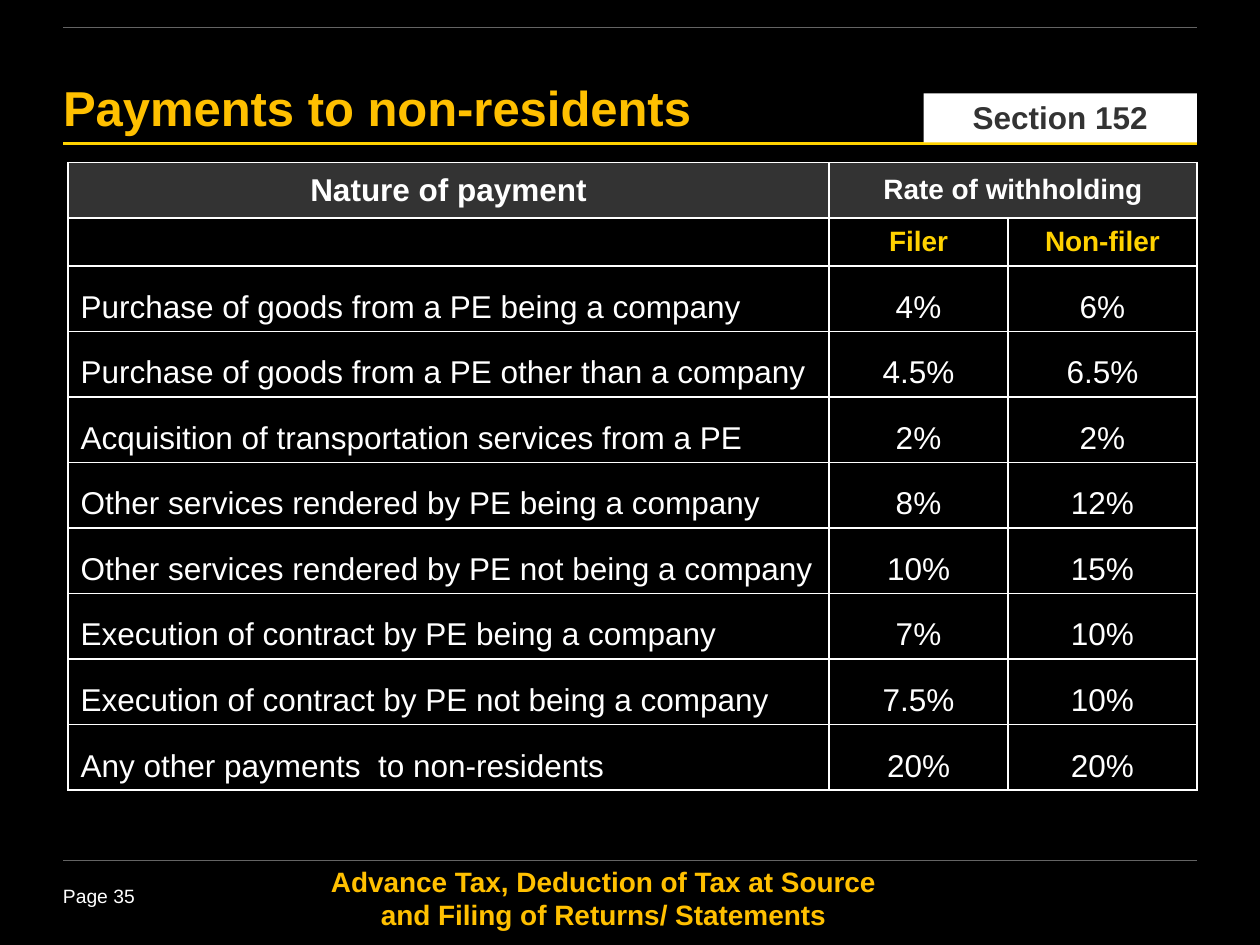
from lxml.etree import SubElement
from pptx import Presentation
from pptx.dml.color import RGBColor
from pptx.enum.shapes import MSO_CONNECTOR as Connector, MSO_SHAPE as Shape
from pptx.enum.text import MSO_ANCHOR as Anchor, PP_ALIGN as Align
from pptx.oxml.ns import qn
from pptx.util import Inches, Pt

BLACK, WHITE, CHARCOAL, GREY = "000000", "FFFFFF", "333333", "646464"
YELLOW, AMBER = "FFD200", "FFC000"

COLUMN_WIDTHS = (6.04, 1.42, 1.5)
HEADER_HEIGHT, SUBHEADER_HEIGHT, RATE_HEIGHT = 0.44, 0.38, 0.52
RATES = [
    ("Purchase of goods from a PE being a company", "4%", "6%"),
    ("Purchase of goods from a PE other than a company", "4.5%", "6.5%"),
    ("Acquisition of transportation services from a PE", "2%", "2%"),
    ("Other services rendered by PE being a company", "8%", "12%"),
    ("Other services rendered by PE not being a company", "10%", "15%"),
    ("Execution of contract by PE being a company", "7%", "10%"),
    ("Execution of contract by PE not being a company", "7.5%", "10%"),
    ("Any other payments  to non-residents", "20%", "20%"),
]


def rgb(hex_color):
    """Turn a hex string into a colour."""
    return RGBColor.from_string(hex_color)


def write(frame, text, size, color, bold=False, align=Align.LEFT, spacing=None):
    """Write one formatted run into the first paragraph of a text frame."""
    paragraph = frame.paragraphs[0]
    paragraph.alignment = align
    if spacing:
        paragraph.line_spacing = spacing
    run = paragraph.add_run()
    run.text = text
    run.font.name = "Arial"
    run.font.size = Pt(size)
    run.font.bold = bold
    run.font.color.rgb = rgb(color)


def set_frame(frame, top=0, anchor=Anchor.TOP):
    """Wrap a text frame and clear its insets except the top one."""
    frame.word_wrap = True
    frame.margin_left = frame.margin_right = frame.margin_bottom = 0
    frame.margin_top = Inches(top)
    frame.vertical_anchor = anchor
    return frame


def add_label(slide, left, top, width, height, inset=0):
    """Add an empty text box and return its text frame."""
    label = slide.shapes.add_textbox(
        Inches(left), Inches(top), Inches(width), Inches(height))
    return set_frame(label.text_frame, inset)


def add_rule(slide, left, top, width, color, weight):
    """Draw a horizontal rule."""
    rule = slide.shapes.add_connector(
        Connector.STRAIGHT, Inches(left), Inches(top),
        Inches(left + width), Inches(top))
    rule.line.color.rgb = rgb(color)
    rule.line.width = Pt(weight)
    SubElement(rule._element.spPr, qn("a:effectLst"))


def add_heading(slide, left, top, width):
    """Place the top rule, title, section tag and yellow underline."""
    add_rule(slide, left, top, width, GREY, 0.5)
    add_rule(slide, left, top + 0.92, width, YELLOW, 1.5)

    tag_width = 2.17
    section = slide.shapes.add_shape(
        Shape.RECTANGLE, Inches(left + width - tag_width), Inches(top + 0.52),
        Inches(tag_width), Inches(0.39))
    section.shadow.inherit = False
    section.fill.solid()
    section.fill.fore_color.rgb = rgb(WHITE)
    section.line.fill.background()
    write(set_frame(section.text_frame, 0.03, Anchor.MIDDLE),
          "Section 152", 18, CHARCOAL, True, Align.CENTER, 0.85)

    title = add_label(slide, left, top + 0.44, 6.58, 0.49, 0.03)
    write(title, "Payments to non-residents", 28, AMBER, True, spacing=0.85)


def style_cell(cell, fill=None):
    """Give a cell white borders and a fill, or none."""
    properties = cell._tc.get_or_add_tcPr()
    for side in ("lnL", "lnR", "lnT", "lnB"):
        border = SubElement(properties, qn(f"a:{side}"), w=str(Pt(1)))
        solid = SubElement(border, qn("a:solidFill"))
        SubElement(solid, qn("a:srgbClr"), val=WHITE)
    if fill:
        cell.fill.solid()
        cell.fill.fore_color.rgb = rgb(fill)
    else:
        cell.fill.background()


def add_rate_table(slide, left, top, width):
    """Place the table of withholding rates."""
    heights = [HEADER_HEIGHT, SUBHEADER_HEIGHT] + [RATE_HEIGHT] * len(RATES)
    table = slide.shapes.add_table(
        len(heights), len(COLUMN_WIDTHS), Inches(left), Inches(top),
        Inches(width), Inches(sum(heights))).table
    for column, column_width in zip(table.columns, COLUMN_WIDTHS):
        column.width = Inches(column_width)
    for row_index, height in enumerate(heights):
        table.rows[row_index].height = Inches(height)
        for cell in table.rows[row_index].cells:
            style_cell(cell, CHARCOAL if row_index == 0 else None)
            if row_index < 2:
                cell.vertical_anchor = Anchor.MIDDLE
            else:
                cell.margin_bottom = Inches(0.02)
    table.cell(0, 1).merge(table.cell(0, 2))

    headers = [
        (0, 0, "Nature of payment", 18, WHITE),
        (0, 1, "Rate of withholding", 16, WHITE),
        (1, 1, "Filer", 16, YELLOW),
        (1, 2, "Non-filer", 16, YELLOW),
    ]
    for row, column, text, size, color in headers:
        write(table.cell(row, column).text_frame, text, size, color, True, Align.CENTER)
    unlabelled = table.cell(1, 0).text_frame.paragraphs[0]
    SubElement(unlabelled._p, qn("a:endParaRPr"), sz="1600")
    for row, rate in enumerate(RATES, start=2):
        for column, text in enumerate(rate):
            align = Align.CENTER if column else Align.JUSTIFY
            write(table.cell(row, column).text_frame, text, 18, WHITE,
                  align=align, spacing=1.5)


def add_footer(slide, left, top, width):
    """Place the bottom rule, page number and presentation name."""
    add_rule(slide, left, top, width, GREY, 0.25)
    page = add_label(slide, left, top + 0.19, 0.73, 0.22)
    write(page, "Page 35", 11, WHITE)
    subject = add_label(slide, left + 2, top + 0.03, 4.58, 0.52)
    write(subject, "Advance Tax, Deduction of Tax at Source and Filing of Returns/ Statements",
          16, AMBER, True, Align.CENTER)


def main():
    """Build and save the slide."""
    deck = Presentation()
    deck.slide_width, deck.slide_height = Inches(10), Inches(7.5)
    slide = deck.slides.add_slide(deck.slide_layouts[6])
    slide.background.fill.solid()
    slide.background.fill.fore_color.rgb = rgb(BLACK)
    add_heading(slide, 0.5, 0.22, 9)
    add_rate_table(slide, 0.54, 1.29, sum(COLUMN_WIDTHS))
    add_footer(slide, 0.5, 6.83, 9)
    deck.save("out.pptx")


if __name__ == "__main__":
    main()
